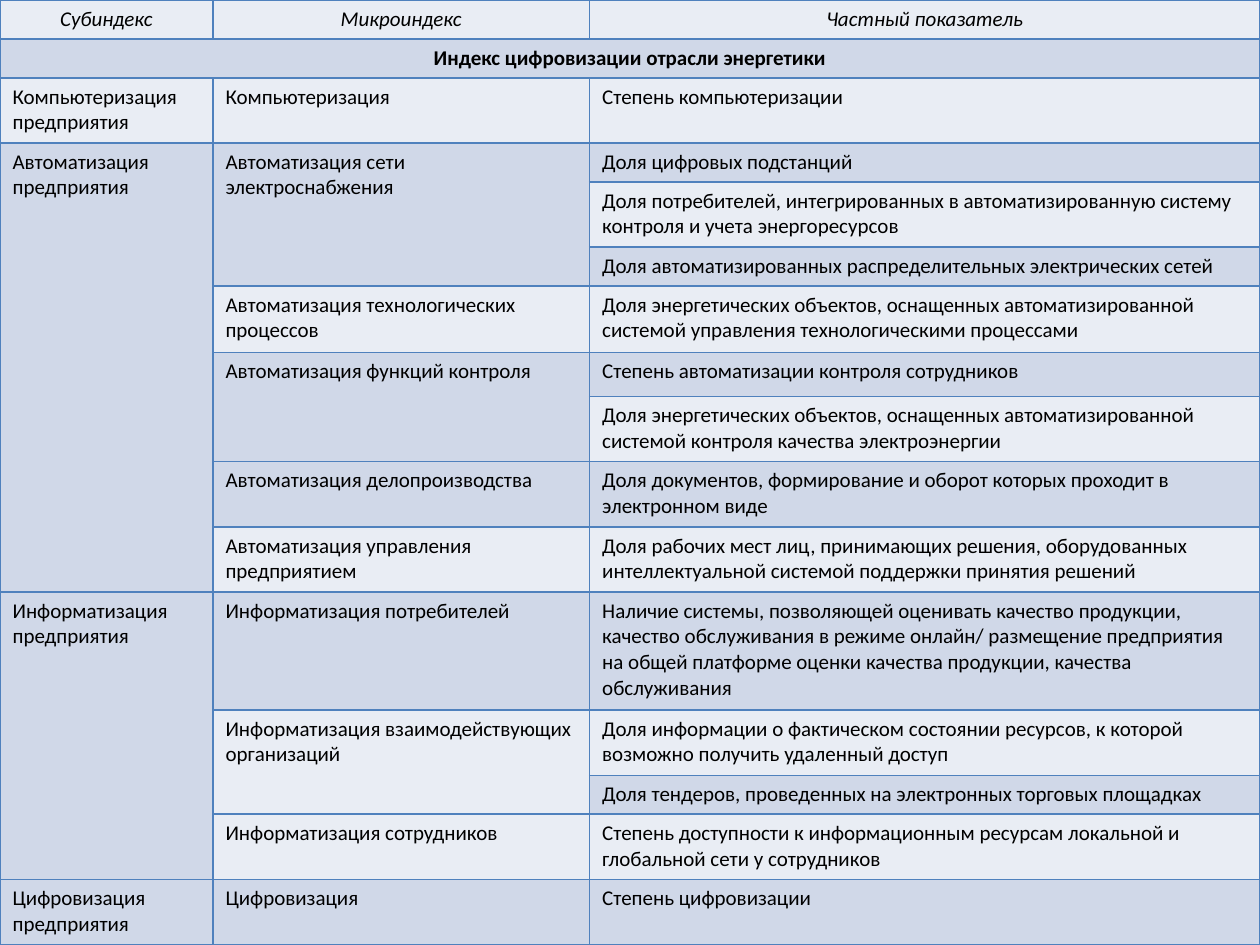
from dataclasses import dataclass

from lxml.etree import SubElement
from pptx import Presentation
from pptx.dml.color import RGBColor as Rgb
from pptx.enum.text import PP_ALIGN as Align
from pptx.oxml.ns import qn
from pptx.util import Inches, Pt


@dataclass(frozen=True)
class Theme:
    font: str = "Calibri"
    size: int = 12
    text: str = "000000"
    bands: tuple = ("E9EDF4", "D0D8E8")
    border: str = "4F81BD"
    border_width: int = 1


THEME = Theme()
COLUMN_WIDTHS = [1.69, 2.99, 5.32]
ROW_HEIGHTS = [0.31, 0.31, 0.52, 0.31, 0.52, 0.31, 0.53, 0.35,
               0.52, 0.52, 0.52, 0.94, 0.52, 0.31, 0.52, 0.52]
HEADINGS = ["Субиндекс", "Микроиндекс", "Частный показатель"]
INDEX_TITLE = "Индекс цифровизации отрасли энергетики"
SUBINDEXES = {
    "Компьютеризация предприятия": {
        "Компьютеризация": ["Степень компьютеризации"],
    },
    "Автоматизация предприятия": {
        "Автоматизация сети электроснабжения": [
            "Доля цифровых подстанций",
            "Доля потребителей, интегрированных в автоматизированную систему "
            "контроля и учета энергоресурсов",
            "Доля автоматизированных распределительных электрических сетей",
        ],
        "Автоматизация технологических процессов": [
            "Доля энергетических объектов, оснащенных автоматизированной "
            "системой управления технологическими процессами",
        ],
        "Автоматизация функций контроля": [
            "Степень автоматизации контроля сотрудников",
            "Доля энергетических объектов, оснащенных автоматизированной "
            "системой контроля качества электроэнергии",
        ],
        "Автоматизация делопроизводства": [
            "Доля документов, формирование и оборот которых проходит в "
            "электронном виде",
        ],
        "Автоматизация управления предприятием": [
            "Доля рабочих мест лиц, принимающих решения, оборудованных "
            "интеллектуальной системой поддержки принятия решений",
        ],
    },
    "Информатизация предприятия": {
        "Информатизация потребителей": [
            "Наличие системы, позволяющей оценивать качество продукции, "
            "качество обслуживания в режиме онлайн/ размещение предприятия "
            "на общей платформе оценки качества продукции, качества "
            "обслуживания",
        ],
        "Информатизация взаимодействующих организаций": [
            "Доля информации о фактическом состоянии ресурсов, к которой "
            "возможно получить удаленный доступ",
            "Доля тендеров, проведенных на электронных торговых площадках",
        ],
        "Информатизация сотрудников": [
            "Степень доступности к информационным ресурсам локальной и "
            "глобальной сети у сотрудников",
        ],
    },
    "Цифровизация предприятия": {
        "Цифровизация": ["Степень цифровизации"],
    },
}


def add_borders(cell):
    properties = cell._tc.get_or_add_tcPr()
    for side in ("a:lnL", "a:lnR", "a:lnT", "a:lnB"):
        line = SubElement(properties, qn(side), w=str(Pt(THEME.border_width)))
        fill = SubElement(line, qn("a:solidFill"))
        SubElement(fill, qn("a:srgbClr"), val=THEME.border)


def style_grid(table):
    for row_number, row in enumerate(table.rows):
        for cell in row.cells:
            add_borders(cell)
            cell.fill.solid()
            cell.fill.fore_color.rgb = Rgb.from_string(THEME.bands[row_number % 2])


def write(table, row, column, text, rows=1, columns=1, align=Align.LEFT, **emphasis):
    cell = table.cell(row, column)
    if rows > 1 or columns > 1:
        cell.merge(table.cell(row + rows - 1, column + columns - 1))
    paragraph = cell.text_frame.paragraphs[0]
    paragraph.alignment = align
    run = paragraph.add_run()
    run.text = text
    formats = {"name": THEME.font, "size": Pt(THEME.size),
               "bold": False, "italic": False} | emphasis
    for attribute, value in formats.items():
        setattr(run.font, attribute, value)
    run.font.color.rgb = Rgb.from_string(THEME.text)


def fill_headings(table):
    for column, heading in enumerate(HEADINGS):
        write(table, 0, column, heading, align=Align.CENTER, italic=True)
    write(table, 1, 0, INDEX_TITLE, columns=len(HEADINGS), align=Align.CENTER, bold=True)


def fill_indicators(table, row):
    for subindex, microindexes in SUBINDEXES.items():
        write(table, row, 0, subindex, rows=sum(map(len, microindexes.values())))
        for microindex, indicators in microindexes.items():
            write(table, row, 1, microindex, rows=len(indicators))
            for indicator in indicators:
                write(table, row, 2, indicator)
                row += 1


def add_index_table(slide, left, top, width, height):
    table = slide.shapes.add_table(
        len(ROW_HEIGHTS), len(COLUMN_WIDTHS), left, top, width, height).table
    table.first_row = False
    table.horz_banding = False
    for column, share in zip(table.columns, COLUMN_WIDTHS):
        column.width = int(width * share / sum(COLUMN_WIDTHS))
    for row, share in zip(table.rows, ROW_HEIGHTS):
        row.height = int(height * share / sum(ROW_HEIGHTS))
    style_grid(table)
    fill_headings(table)
    fill_indicators(table, row=2)


def main():
    presentation = Presentation()
    presentation.slide_width = Inches(10)
    presentation.slide_height = Inches(7.5)
    slide = presentation.slides.add_slide(presentation.slide_layouts[6])
    add_index_table(slide, Inches(0), Inches(0), Inches(10), Inches(7.5))
    presentation.save("out.pptx")


if __name__ == "__main__":
    main()
